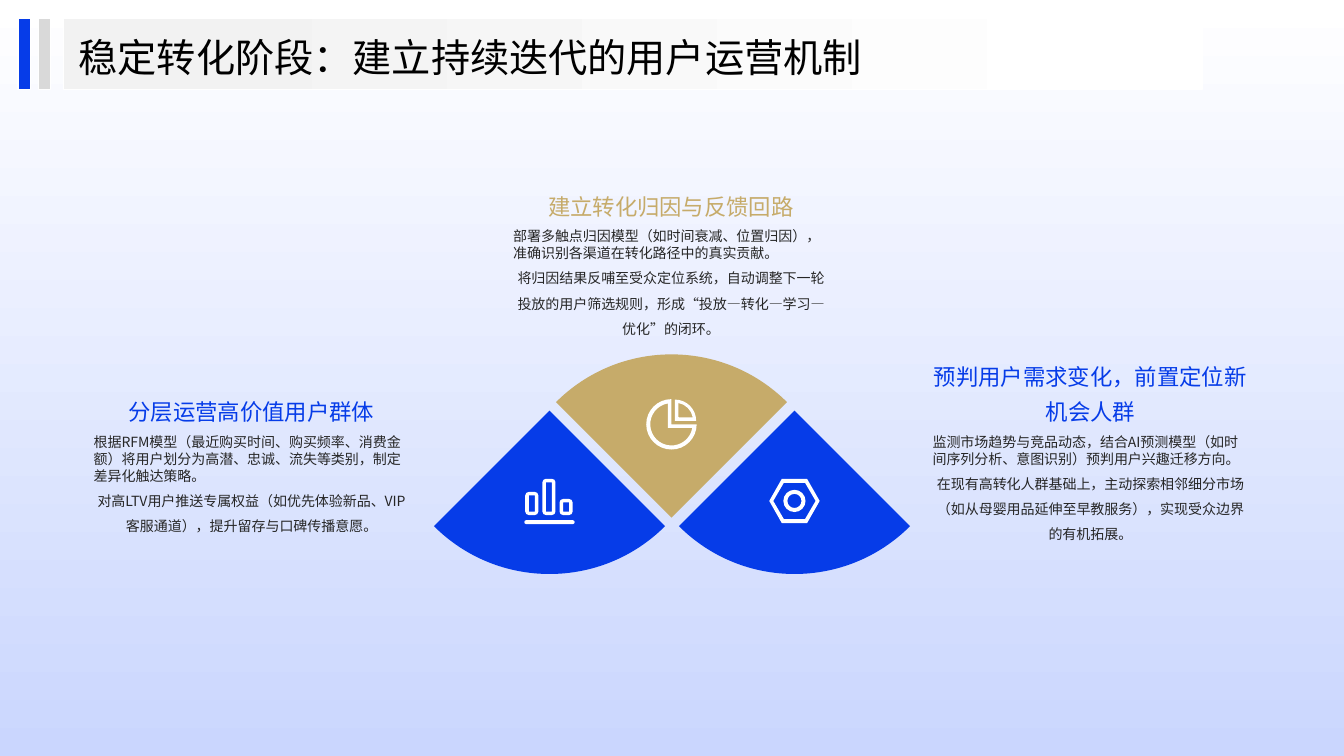
import math
from dataclasses import dataclass

import pptx
import pptx.dml.color
import pptx.enum.shapes
import pptx.enum.text
import pptx.oxml
import pptx.oxml.ns
import pptx.util

Inches = pptx.util.Inches
ALIGN = pptx.enum.text.PP_ALIGN
ANCHOR = pptx.enum.text.MSO_ANCHOR
FONT = "Noto Sans CJK SC"
COLORS = {
    "white": "FFFFFF", "sky": "CAD6FE", "mist": "F2F2F2", "gray": "D9D9D9",
    "blue": "063CE8", "gold": "C6AB6A", "ink": "262626", "black": "000000",
}
Point = tuple[float, float]
# A step of one point is a straight line, a step of three points a Bezier curve
Contour = list[tuple[Point, ...]]


@dataclass
class Bar:
    left: float
    top: float
    width: float
    height: float
    fill: tuple[str, ...]
    stops: tuple[float, float] = (0, 1)
    angle: float = 0
    outlined: bool = True


@dataclass
class Topic:
    left: float
    heading_top: float
    color: str
    heading: str
    body: str


@dataclass
class Sector:
    left: float
    top: float
    rotation: float
    color: str


def rgb(name: str) -> pptx.dml.color.RGBColor:
    return pptx.dml.color.RGBColor.from_string(COLORS[name])


def add_bar(page, bar: Bar) -> None:
    shape = page.shapes.add_shape(
        pptx.enum.shapes.MSO_SHAPE.RECTANGLE,
        *map(Inches, (bar.left, bar.top, bar.width, bar.height)))
    shape.shadow.inherit = False
    if len(bar.fill) == 1:
        shape.fill.solid()
        shape.fill.fore_color.rgb = rgb(bar.fill[0])
    else:
        shape.fill.gradient()
        shape.fill.gradient_angle = bar.angle
        for stop, color, position in zip(shape.fill.gradient_stops, bar.fill, bar.stops):
            stop.color.rgb = rgb(color)
            stop.position = position
    if bar.outlined:
        shape.line.color.rgb = rgb("white")
        shape.line.width = pptx.util.Pt(1)
    else:
        shape.line.fill.background()


def write(box, text: str, *, size: float, color: str, spacing: float,
          align=ALIGN.CENTER, anchor=ANCHOR.TOP) -> None:
    frame = box.text_frame
    frame.word_wrap = True
    frame.auto_size = pptx.enum.text.MSO_AUTO_SIZE.NONE
    frame.vertical_anchor = anchor
    frame.margin_left = frame.margin_top = frame.margin_right = frame.margin_bottom = 0
    para = frame.paragraphs[0]
    para.alignment, para.line_spacing = align, spacing
    para.space_before = pptx.util.Pt(0)
    span = para.add_run()
    span.text = text
    span.font.size = pptx.util.Pt(size)
    span.font.name = FONT
    span.font.color.rgb = rgb(color)
    east_asian = pptx.oxml.parse_xml(
        f'<a:ea {pptx.oxml.ns.nsdecls("a")} typeface="{FONT}"/>')
    span.font._element.find(pptx.oxml.ns.qn("a:latin")).addnext(east_asian)


def add_outline(page, contours: list[Contour], color: str):
    """Draw closed contours as one shape; inner contours become holes."""
    first_x, first_y = contours[0][0][0]
    builder = page.shapes.build_freeform(Inches(first_x), Inches(first_y), scale=1.0)
    for index, contour in enumerate(contours):
        points = [(Inches(x), Inches(y)) for step in contour for x, y in step]
        if index:
            builder.move_to(*points[0])
        builder.add_line_segments(points[1:], close=True)
    shape = builder.convert_to_shape()

    # Join the three points of each curve into one Bezier segment
    lines = iter(list(shape._element.iter(pptx.oxml.ns.qn("a:lnTo"))))
    for contour in contours:
        for step in contour[1:]:
            parts = [next(lines) for _ in step]
            if len(parts) == 3:
                curve = pptx.oxml.parse_xml(f'<a:cubicBezTo {pptx.oxml.ns.nsdecls("a")}/>')
                parts[0].addprevious(curve)
                for part in parts:
                    curve.append(part[0])
                    part.getparent().remove(part)
        # The closing line back to the start is left to the close command
        if contour[-1][-1] != contour[0][0]:
            continue

    shape.shadow.inherit = False
    shape.fill.solid()
    shape.fill.fore_color.rgb = rgb(color)
    shape.line.fill.background()
    return shape


def arc(x: float, y: float, radius: float, start: float = 0, end: float = 360) -> Contour:
    """Start point, then one curve for each quarter turn or less."""
    count = math.ceil((end - start) / 90)
    turn = math.radians((end - start) / count)
    pull = 4 / 3 * math.tan(turn / 4)
    steps: Contour = []
    for index in range(count + 1):
        angle = math.radians(start) + turn * index
        cos, sin = radius * math.cos(angle), radius * math.sin(angle)
        point = (x + cos, y + sin)
        if steps:
            steps.append((leaving, (point[0] + pull * sin, point[1] - pull * cos), point))
        else:
            steps.append((point,))
        leaving = (point[0] - pull * sin, point[1] + pull * cos)
    return steps


def polygon(*points: Point) -> Contour:
    return [(point,) for point in points]


def rect(left: float, top: float, right: float, bottom: float) -> Contour:
    return polygon((left, top), (right, top), (right, bottom), (left, bottom))


def round_rect(left: float, top: float, right: float, bottom: float, radius: float) -> Contour:
    corners = [(right - radius, bottom - radius), (left + radius, bottom - radius),
               (left + radius, top + radius), (right - radius, top + radius)]
    return [step for i, (x, y) in enumerate(corners)
            for step in arc(x, y, radius, 90 * i, 90 * i + 90)]


def hexagon(x: float, y: float, half_width: float, half_height: float) -> Contour:
    half = half_width / 2
    return polygon((x - half_width, y), (x - half, y - half_height),
                   (x + half, y - half_height), (x + half_width, y),
                   (x + half, y + half_height), (x - half, y + half_height))


def slice_of(corner: Point, *circle: float) -> Contour:
    return polygon(corner) + arc(*circle)


def pie_icon(x: float, y: float) -> list[Contour]:
    gap = 0.035
    wedge_x, wedge_y = x + gap, y - gap
    return [slice_of((x, y), x, y, 0.25, 0, 270),
            slice_of((x - gap, y + gap), x, y, 0.21, 10, 260),
            slice_of((wedge_x, wedge_y), wedge_x, wedge_y, 0.21, -90, 0),
            slice_of((wedge_x + gap, wedge_y - gap), wedge_x, wedge_y, 0.18, -79, -11)]


def chart_icon(left: float, bottom: float) -> list[Contour]:
    contours = [round_rect(left, bottom - 0.04, left + 0.5, bottom, 0.02)]
    foot, wall = bottom - 0.09, 0.035
    for index, height in enumerate((0.23, 0.36, 0.16)):
        start, top = left + 0.01 + 0.17 * index, foot - height
        contours += [round_rect(start, top, start + 0.13, foot, wall),
                     rect(start + wall, top + wall, start + 0.13 - wall, foot - wall)]
    return contours


def nut_icon(x: float, y: float) -> list[Contour]:
    return [hexagon(x, y, 0.25, 0.22), hexagon(x, y, 0.21, 0.18),
            arc(x, y, 0.11), arc(x, y, 0.07)]


BACKDROP = Bar(0, 0, 13.33, 7.5, ("white", "sky"), angle=270, outlined=False)
HEADER_BARS = [
    Bar(0.63, 0.18, 11.29, 0.71, ("mist", "white"), stops=(0.1, 0.93)),
    Bar(0.18, 0.18, 0.12, 0.71, ("blue",)),
    Bar(0.38, 0.18, 0.12, 0.71, ("gray",)),
]
SECTOR_RADIUS = 1.62
SECTORS = [Sector(5.85, 3.18, 225, "gold"), Sector(7.07, 4.41, 45, "blue"),
           Sector(4.64, 4.41, 45, "blue")]
TOPICS = [
    Topic(0.93, 3.49, "blue", "分层运营高价值用户群体",
          "根据RFM模型（最近购买时间、购买频率、消费金额）将用户划分为高潜、忠诚、流失等类别，制定差异化触达策略。\n"
          "对高LTV用户推送专属权益（如优先体验新品、VIP客服通道），提升留存与口碑传播意愿。"),
    Topic(5.09, 1.45, "gold", "建立转化归因与反馈回路",
          "部署多触点归因模型（如时间衰减、位置归因），准确识别各渠道在转化路径中的真实贡献。\n"
          "将归因结果反哺至受众定位系统，自动调整下一轮投放的用户筛选规则，形成“投放—转化—学习—优化”的闭环。"),
    Topic(9.25, 3.49, "blue", "预判用户需求变化，前置定位新机会人群",
          "监测市场趋势与竞品动态，结合AI预测模型（如时间序列分析、意图识别）预判用户兴趣迁移方向。\n"
          "在现有高转化人群基础上，主动探索相邻细分市场（如从母婴用品延伸至早教服务），实现受众边界的有机拓展。"),
]


def main() -> None:
    deck = pptx.Presentation()
    deck.slide_width, deck.slide_height = Inches(13.33), Inches(7.5)
    page = deck.slides.add_slide(deck.slide_layouts[5])
    add_bar(page, BACKDROP)

    # Fan of three quarter circles
    for sector in SECTORS:
        corner = (sector.left, sector.top)
        quarter = slice_of(corner, *corner, SECTOR_RADIUS, 0, 90)
        add_outline(page, [quarter], sector.color).rotation = sector.rotation

    # Topic texts
    for topic in TOPICS:
        body = page.shapes.add_textbox(
            *map(Inches, (topic.left, topic.heading_top + 0.81, 3.13, 1.13)))
        write(body, topic.body, size=10, color="ink", spacing=1.5)
        heading = page.shapes.add_textbox(
            *map(Inches, (topic.left, topic.heading_top, 3.13, 0.73)))
        write(heading, topic.heading, size=16, color=topic.color, spacing=1.3,
              anchor=ANCHOR.BOTTOM)

    # Icons on the fan
    for icon in (pie_icon(6.66, 4.21), chart_icon(5.2, 5.2), nut_icon(7.88, 4.97)):
        add_outline(page, icon, "white")

    # Header, with the title above its bars
    for bar in HEADER_BARS:
        add_bar(page, bar)
    title = page.shapes.title
    title.left, title.top, title.width, title.height = map(Inches, (0.78, 0.29, 8.3, 0.51))
    write(title, "稳定转化阶段：建立持续迭代的用户运营机制", size=28, color="black",
          spacing=1.1, align=ALIGN.LEFT, anchor=ANCHOR.MIDDLE)
    page.shapes._spTree.append(title._element)

    deck.save("out.pptx")


if __name__ == "__main__":
    main()
